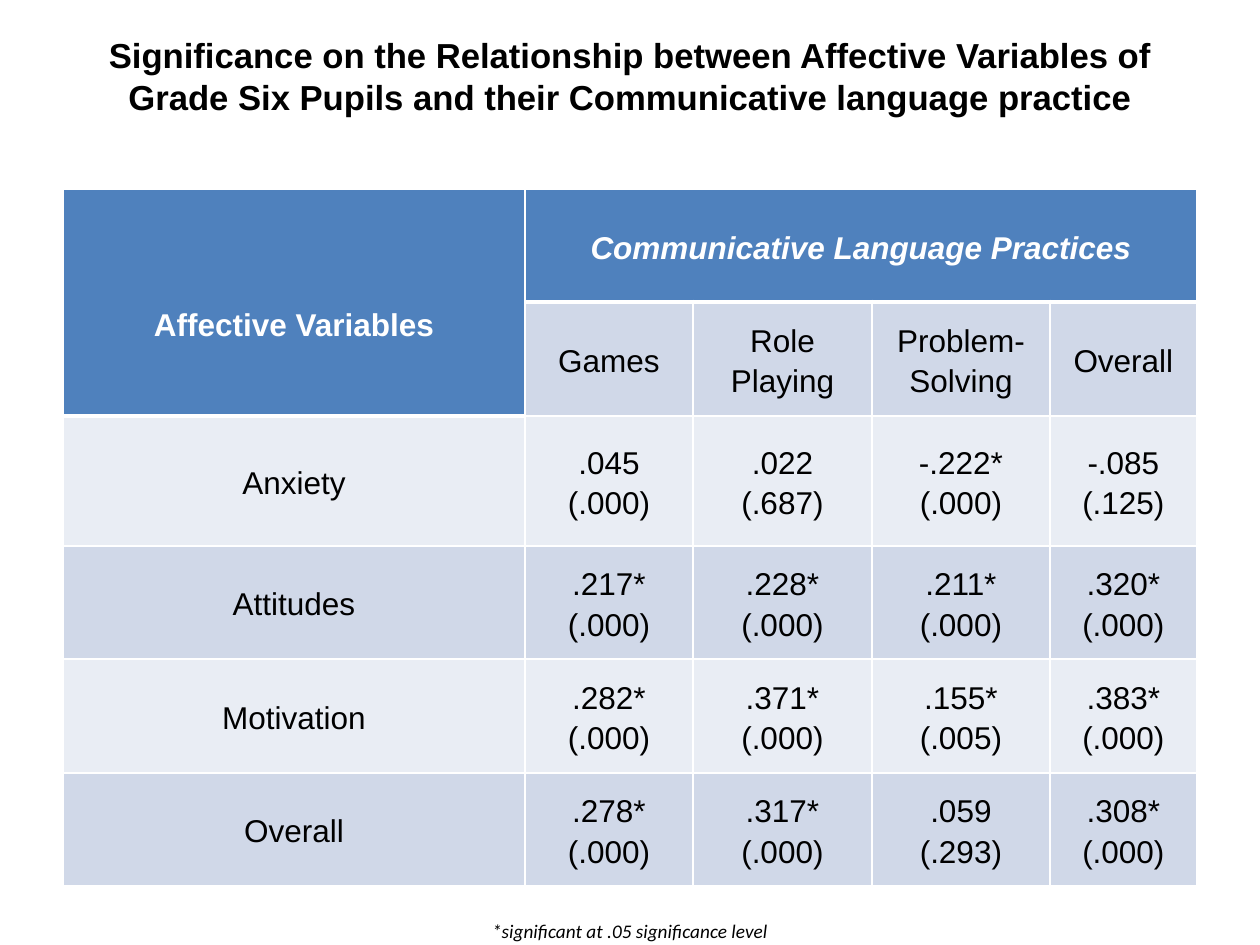
from lxml import etree
from pptx import Presentation
from pptx.dml.color import RGBColor
from pptx.enum.text import MSO_ANCHOR, PP_ALIGN
from pptx.oxml.ns import qn
from pptx.util import Emu, Pt

CENTER = PP_ALIGN.CENTER
MIDDLE = MSO_ANCHOR.MIDDLE
PX = 914400 // 126
WHITE, BLACK, BLUE = "FFFFFF", "000000", "4F81BD"
BANDS = ["D0D8E8", "E9EDF4"]

COLUMN_WIDTHS = [462, 168, 179, 178, 147]
ROW_HEIGHTS = [113, 114, 130, 113, 114, 113]
PRACTICES = ["Games", "Role Playing", "Problem-Solving", "Overall"]
CORRELATIONS = [
    ("Anxiety", [(".045", "(.000)"), (".022", "(.687)"), ("-.222*", "(.000)"), ("-.085", "(.125)")]),
    ("Attitudes", [(".217*", "(.000)"), (".228*", "(.000)"), (".211*", "(.000)"), (".320*", "(.000)")]),
    ("Motivation", [(".282*", "(.000)"), (".371*", "(.000)"), (".155*", "(.005)"), (".383*", "(.000)")]),
    ("Overall", [(".278*", "(.000)"), (".317*", "(.000)"), (".059", "(.293)"), (".308*", "(.000)")]),
]


def px(length):
    return Emu(length * PX)


def color(value):
    return RGBColor.from_string(value)


def write(frame, lines, size, ink=BLACK, font="Arial", bold=False, italic=False, spacing=None):
    frame.word_wrap = True
    for index, line in enumerate(lines):
        paragraph = frame.paragraphs[0] if index == 0 else frame.add_paragraph()
        paragraph.alignment = CENTER
        if spacing:
            paragraph.line_spacing = spacing
        run = paragraph.add_run()
        run.text = line
        run.font.size = Pt(size)
        run.font.name = font
        run.font.bold = bold
        run.font.italic = italic
        run.font.color.rgb = color(ink)


def add_caption(slide, box, text, size, **style):
    caption = slide.shapes.add_textbox(*map(px, box))
    caption.text_frame.vertical_anchor = MIDDLE
    write(caption.text_frame, [text], size, **style)


def set_borders(cell, top=1, bottom=1):
    properties = cell._tc.get_or_add_tcPr()
    for side, width in (("L", 1), ("R", 1), ("T", top), ("B", bottom)):
        line = etree.SubElement(properties, qn(f"a:ln{side}"), w=str(Pt(width)))
        fill = etree.SubElement(line, qn("a:solidFill"))
        etree.SubElement(fill, qn("a:srgbClr"), val=WHITE)


def style_cell(cell, fill, top=1, bottom=1):
    set_borders(cell, top, bottom)
    cell.fill.solid()
    cell.fill.fore_color.rgb = color(fill)
    cell.vertical_anchor = MIDDLE
    cell.margin_left = cell.margin_right = px(9)
    cell.margin_top = cell.margin_bottom = 0


def add_correlation_table(slide, left, top):
    table = slide.shapes.add_table(
        len(ROW_HEIGHTS), len(COLUMN_WIDTHS), px(left), px(top),
        px(sum(COLUMN_WIDTHS)), px(sum(ROW_HEIGHTS)),
    ).table
    table.first_row = table.horz_banding = False
    for column, width in zip(table.columns, COLUMN_WIDTHS):
        column.width = px(width)
    for row, height in zip(table.rows, ROW_HEIGHTS):
        row.height = px(height)

    for row in range(len(ROW_HEIGHTS)):
        for column in range(len(COLUMN_WIDTHS)):
            header_end = 1 if column == 0 else 0
            style_cell(
                table.cell(row, column),
                BLUE if row <= header_end else BANDS[(row - 1) % 2],
                top=3 if row == header_end + 1 else 1,
                bottom=3 if row <= header_end else 1,
            )

    variables_header, practices_header = table.cell(0, 0), table.cell(0, 1)
    variables_header.merge(table.cell(1, 0))
    practices_header.merge(table.cell(0, len(PRACTICES)))
    variables_header.margin_top = px(41)
    write(variables_header.text_frame, ["Affective Variables"], 18, WHITE, bold=True, spacing=1.15)
    write(practices_header.text_frame, ["Communicative Language Practices"], 18, WHITE,
          bold=True, italic=True, spacing=1.15)

    for column, practice in enumerate(PRACTICES, 1):
        write(table.cell(1, column).text_frame, [practice], 18, spacing=1.15)
    for row, (variable, results) in enumerate(CORRELATIONS, 2):
        for column, lines in enumerate([(variable,), *results]):
            write(table.cell(row, column).text_frame, lines, 18, spacing=1.15)


def main():
    presentation = Presentation()
    presentation.slide_width, presentation.slide_height = px(1260), px(945)
    slide = presentation.slides.add_slide(presentation.slide_layouts[6])
    add_caption(
        slide, (63, 23, 1134, 105),
        "Significance on the Relationship between Affective Variables of "
        "Grade Six Pupils and their Communicative language practice",
        19.8, bold=True,
    )
    add_correlation_table(slide, 63, 189)
    add_caption(slide, (0, 912, 1260, 37), "*significant at .05 significance level",
                11, font="Calibri", italic=True)
    presentation.save("out.pptx")


if __name__ == "__main__":
    main()
